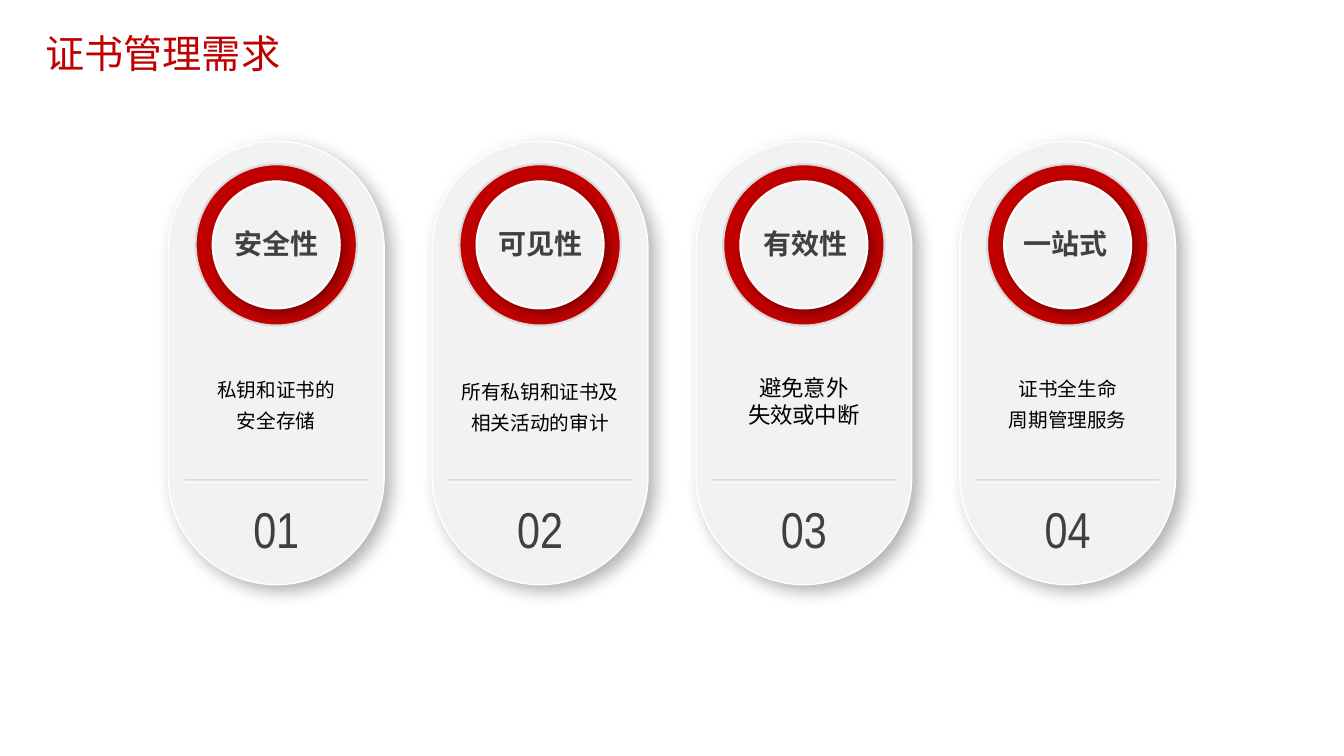
from collections import namedtuple
from lxml import etree
from pptx import Presentation
from pptx.dml.color import RGBColor
from pptx.enum.shapes import MSO_SHAPE
from pptx.enum.text import MSO_ANCHOR, MSO_AUTO_SIZE, PP_ALIGN
from pptx.oxml.ns import qn
from pptx.util import Inches, Pt

PILL, OVAL, RECT = MSO_SHAPE.ROUNDED_RECTANGLE, MSO_SHAPE.OVAL, MSO_SHAPE.RECTANGLE
LEFT, CENTER = PP_ALIGN.LEFT, PP_ALIGN.CENTER
TOP = MSO_ANCHOR.TOP
GROW = MSO_AUTO_SIZE.SHAPE_TO_FIT_TEXT

COLS, ROWS = 1333, 750
CELL = Inches(0.01)
SANS, NARROW = "Noto Sans CJK SC", "Arial Narrow"
COLORS = {
    "red": "C00000",
    "panel": "F2F2F2",
    "edge": "D9D9D9",
    "rule": "D3D3D3",
    "white": "FFFFFF",
    "dark": "404040",
    "black": "000000",
}

Box = namedtuple("Box", "left top width height")
Card = namedtuple("Card", "label shift lines size space top width height")

CARDS = [
    Card("安全性", 0, ["私钥和证书的", "安全存储"], 14, 1.3, 228, 248, 57),
    Card("可见性", 0, ["所有私钥和证书及相关活动的审计"], 14, 1.3, 230, 171, 58),
    Card("有效性", 2, ["避免意外", "失效或中断"], 16, None, 231, 233, 54),
    Card("一站式", -2, ["证书全生命", "周期管理服务"], 14, 1.3, 227, 248, 57),
]


def color(name):
    return RGBColor.from_string(COLORS[name])


def cells(box):
    return [round(n * CELL) for n in box]


def inside(box, top, width, height, shift=0):
    left = box.left + (box.width - width) / 2 + shift
    return Box(left, box.top + top, width, height)


def write(shape, lines, size, ink="black", font=SANS, bold=False,
          align=CENTER, space=None, pad=(0, 0)):
    frame = shape.text_frame
    frame.word_wrap = True
    frame.auto_size = GROW
    frame.vertical_anchor = TOP
    frame.margin_left = frame.margin_right = Inches(pad[0])
    frame.margin_top = frame.margin_bottom = Inches(pad[1])
    for i, line in enumerate(lines):
        para = frame.add_paragraph() if i else frame.paragraphs[0]
        para.alignment = align
        if space:
            para.line_spacing = space
        run = para.add_run()
        run.text = line
        run.font.size = Pt(size)
        run.font.bold = bold
        run.font.name = font
        run.font.color.rgb = color(ink)
        east = etree.SubElement(run.font._element, qn("a:ea"))
        east.set("typeface", font)


def label(slide, box, lines, size, **style):
    write(slide.shapes.add_textbox(*cells(box)), lines, size, **style)


def draw(shapes, kind, box, fill, line=None, width=1):
    shape = shapes.add_shape(kind, *cells(box))
    shape.shadow.inherit = False
    shape.fill.solid()
    shape.fill.fore_color.rgb = color(fill)
    if line:
        shape.line.color.rgb = color(line)
        shape.line.width = Pt(width)
    else:
        shape.line.fill.background()
    return shape


def shade(shape, blur, dist):
    effects = shape._element.spPr.find(qn("a:effectLst"))
    outer = etree.SubElement(
        effects, qn("a:outerShdw"), blurRad=str(Pt(blur)), dist=str(Pt(dist)),
        dir="2700000", algn="tl", rotWithShape="0")
    tint = etree.SubElement(outer, qn("a:srgbClr"), val=COLORS["black"])
    etree.SubElement(tint, qn("a:alpha"), val="30000")


def badge(slide, box):
    group = slide.shapes.add_group_shape()
    draw(group.shapes, OVAL, box, "red", "edge", 1.5)
    disc = draw(group.shapes, OVAL, inside(box, 17, 126, 126), "panel", "white", 1.5)
    shade(disc, 7, 4)


def rule(slide, box):
    bar = draw(slide.shapes, RECT, box, "rule")
    bar.fill.gradient()
    bar.fill.gradient_angle = 270
    for stop, place, name in zip(bar.fill.gradient_stops, (0, 1), ("rule", "white")):
        stop.position = place
        stop.color.rgb = color(name)


def column(slide, box, number, card):
    pill = draw(slide.shapes, PILL, box, "panel", "white")
    pill.adjustments[0] = 0.5
    shade(pill, 12, 6)
    badge(slide, inside(box, 23, 160, 160))
    rule(slide, inside(box, 335, 182, 4))
    label(slide, inside(box, 349, 113, 71), [f"{number:02}"], 36,
          ink="dark", font=NARROW, pad=(0.1, 0.05))
    label(slide, inside(box, card.top, card.width, card.height), card.lines,
          card.size, space=card.space)
    label(slide, inside(box, 85, 219, 34, card.shift), [card.label], 20,
          ink="dark", bold=True)


def heading(slide, box, text):
    title = slide.shapes.title
    title.left, title.top, title.width, title.height = cells(box)
    write(title, [text], 28, ink="red", align=LEFT, space=1.0, pad=(0.1, 0.05))


def main():
    deck = Presentation()
    deck.slide_width, deck.slide_height = COLS * CELL, ROWS * CELL
    slide = deck.slides.add_slide(deck.slide_layouts[5])
    heading(slide, Box(35, 24, 457, 57), "证书管理需求")
    first, last = 167, 952
    step = (last - first) / (len(CARDS) - 1)
    for i, card in enumerate(CARDS):
        column(slide, Box(first + i * step, 140, 214, 440), i + 1, card)
    deck.save("out.pptx")


if __name__ == "__main__":
    main()
